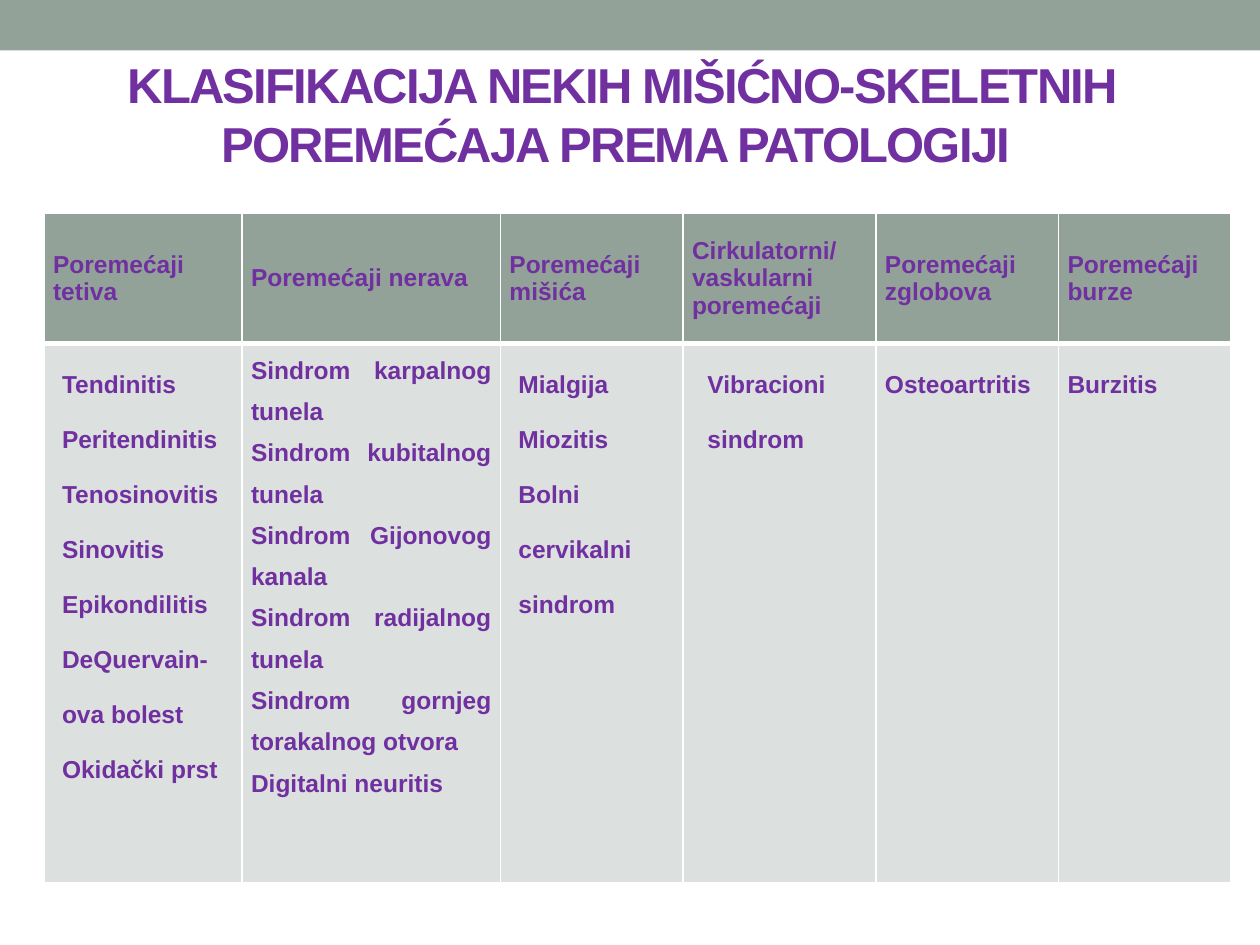
from dataclasses import dataclass

from lxml import etree
from pptx import Presentation
from pptx import util as u
from pptx.dml.color import RGBColor
from pptx.enum import shapes, text
from pptx.oxml.ns import qn

PURPLE, SAGE, PALE, WHITE = "7030A0", "93A299", "DCE0DE", "FFFFFF"
FONT = "Arial"
LEFT, JUSTIFY = text.PP_ALIGN.LEFT, text.PP_ALIGN.JUSTIFY
HEADER_HEIGHT, BODY_HEIGHT = 2.62, 10.87


@dataclass
class Column:
    """One group of disorders; lengths in centimetres."""
    width: float
    heading: list[str]
    items: list[str]
    margin: float = 0.18
    indent: float = 0
    spacing: float = 2
    align: text.PP_ALIGN = JUSTIFY


COLUMNS = [
    Column(3.99, ["Poremećaji tetiva"],
           ["Tendinitis", "Peritendinitis", "Tenosinovitis", "Sinovitis",
            "Epikondilitis", "DeQuervain-ova bolest", "Okidački prst"]),
    Column(5.21, ["Poremećaji nerava"],
           ["Sindrom karpalnog tunela", "Sindrom kubitalnog tunela",
            "Sindrom Gijonovog kanala", "Sindrom radijalnog tunela",
            "Sindrom gornjeg torakalnog otvora", "Digitalni neuritis"],
           margin=0, spacing=1.5),
    Column(3.68, ["Poremećaji mišića"],
           ["Mialgija", "Miozitis", "Bolni cervikalni sindrom"], align=LEFT),
    Column(3.89, ["Cirkulatorni/", "vaskularni poremećaji"],
           ["Vibracioni", "sindrom"], margin=0.51, indent=-0.2),
    Column(3.68, ["Poremećaji zglobova"], ["Osteoartritis"],
           margin=0.97, indent=-0.97),
    Column(3.48, ["Poremećaji burze"], ["Burzitis"],
           margin=0.97, indent=-0.97),
]


def color(value: str) -> RGBColor:
    return RGBColor.from_string(value)


def style(p, size: float, align: text.PP_ALIGN) -> None:
    p.alignment = align
    f = p.font
    f.name, f.size, f.bold = FONT, u.Pt(size), True
    f.color.rgb = color(PURPLE)


def add_borders(cell, top: float, bottom: float) -> None:
    """Draw white cell borders; widths in points."""
    tc_pr = cell._tc.get_or_add_tcPr()
    widths = {"a:lnL": 1, "a:lnR": 1, "a:lnT": top, "a:lnB": bottom}
    for tag, width in widths.items():
        ln = etree.SubElement(tc_pr, qn(tag), w=str(u.Pt(width)))
        fill = etree.SubElement(ln, qn("a:solidFill"))
        etree.SubElement(fill, qn("a:srgbClr"), val=WHITE)


def fill_cell(cell, lines: list[str], fill: str, align: text.PP_ALIGN,
              top: float = 1, bottom: float = 1) -> list:
    """Write the lines into a cell and return its paragraphs."""
    add_borders(cell, top, bottom)
    cell.fill.solid()
    cell.fill.fore_color.rgb = color(fill)
    cell.margin_left = cell.margin_right = u.Cm(0.18)
    cell.margin_top = cell.margin_bottom = 0
    tf = cell.text_frame
    tf.text = "\n".join(lines)
    for p in tf.paragraphs:
        style(p, 14, align)
    return list(tf.paragraphs)


def add_band(s) -> None:
    sp = s.shapes.add_shape(shapes.MSO_SHAPE.RECTANGLE, 0, 0,
                            u.Cm(25.4), u.Cm(1.02))
    sp.shadow.inherit = False
    sp.fill.solid()
    sp.fill.fore_color.rgb = color(SAGE)
    sp.line.fill.background()


def add_title(s, title: str) -> None:
    sp = s.shapes.add_textbox(u.Cm(0.84), u.Cm(1.8), u.Cm(23.39), u.Cm(1.8))
    tf = sp.text_frame
    tf.word_wrap = True
    tf.vertical_anchor = text.MSO_ANCHOR.BOTTOM
    p = tf.paragraphs[0]
    r = p.add_run()
    r.text = title
    style(p, 28, text.PP_ALIGN.CENTER)
    r.font._element.set("spc", "-100")


def add_disorder_table(s, columns: list[Column]) -> None:
    width = sum(c.width for c in columns)
    frame = s.shapes.add_table(2, len(columns), u.Cm(0.89), u.Cm(4.3),
                               u.Cm(width), u.Cm(HEADER_HEIGHT + BODY_HEIGHT))
    table = frame.table
    table.horz_banding = False
    table.rows[0].height = u.Cm(HEADER_HEIGHT)
    table.rows[1].height = u.Cm(BODY_HEIGHT)
    for i, c in enumerate(columns):
        table.columns[i].width = u.Cm(c.width)
        head = table.cell(0, i)
        fill_cell(head, c.heading, SAGE, LEFT, bottom=3)
        head.vertical_anchor = text.MSO_ANCHOR.MIDDLE
        for p in fill_cell(table.cell(1, i), c.items, PALE, c.align, top=3):
            p.line_spacing = c.spacing
            p_pr = p._p.get_or_add_pPr()
            p_pr.set("marL", str(u.Cm(c.margin)))
            p_pr.set("indent", str(u.Cm(c.indent)))


def main() -> None:
    prs = Presentation()
    prs.slide_width, prs.slide_height = u.Cm(25.4), u.Cm(19.05)
    s = prs.slides.add_slide(prs.slide_layouts[6])

    # Top band, table, title
    add_band(s)
    add_disorder_table(s, COLUMNS)
    add_title(s, "KLASIFIKACIJA NEKIH MIŠIĆNO-SKELETNIH "
                 "POREMEĆAJA PREMA PATOLOGIJI ")

    prs.save("out.pptx")


if __name__ == "__main__":
    main()
